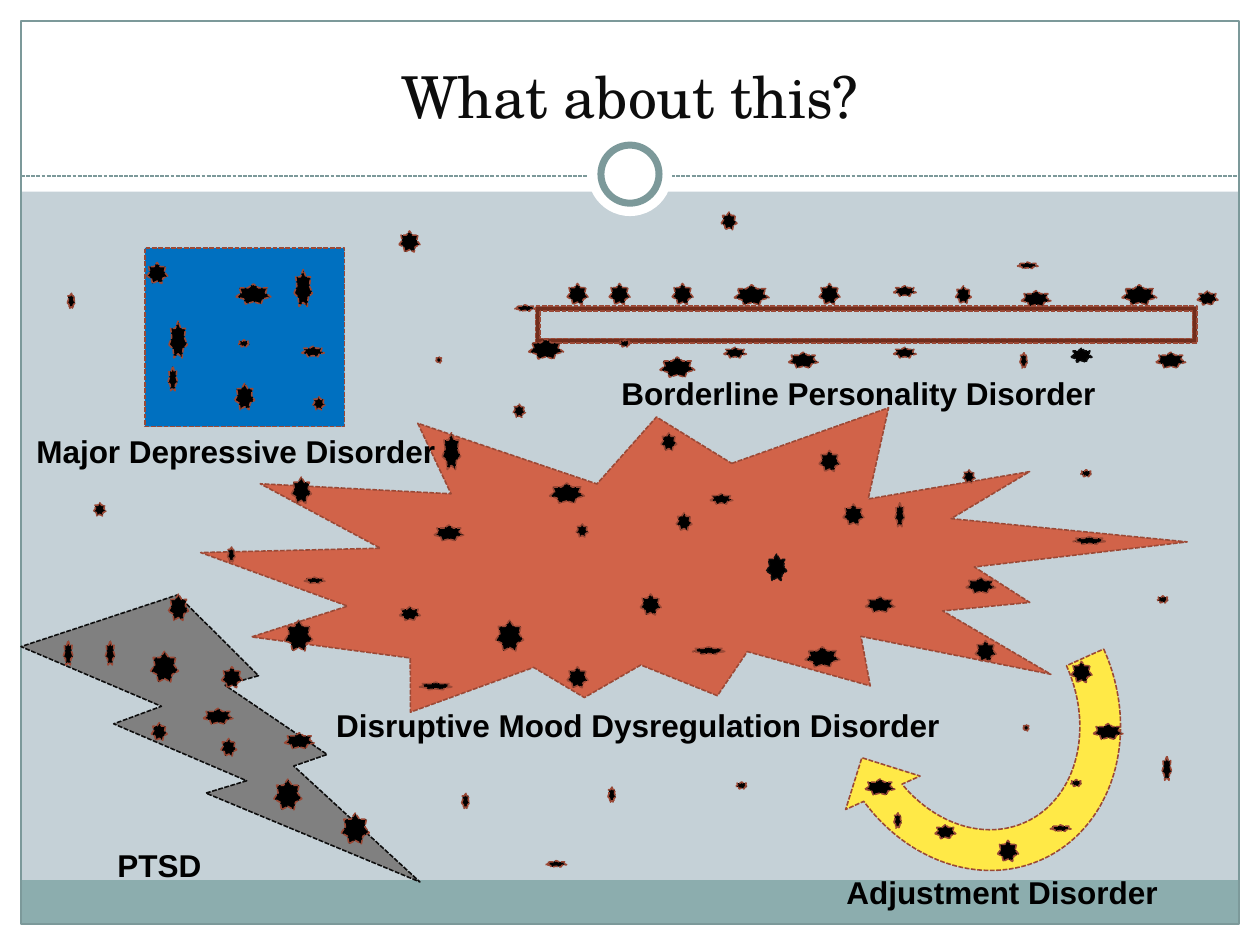
import pptx
import pptx.util
import pptx.dml.color
import pptx.enum.dml
import pptx.enum.shapes
import pptx.enum.text
import lxml.etree

Pt = pptx.util.Pt
RGB = pptx.dml.color.RGBColor
MSO = pptx.enum.shapes.MSO_SHAPE
DASH = pptx.enum.dml.MSO_LINE.SQUARE_DOT
WHITE = RGB(0xFF, 0xFF, 0xFF)
BLACK = RGB(0x00, 0x00, 0x00)
INK = RGB(0x0D, 0x0D, 0x0D)
PALE = RGB(0xC5, 0xD1, 0xD7)
TEAL = RGB(0x8C, 0xAD, 0xAE)
SLATE = RGB(0x7C, 0x99, 0x9A)
RUST = RGB(0x9B, 0x49, 0x36)
ORANGE = RGB(0xD1, 0x63, 0x49)
GRAY = RGB(0x80, 0x80, 0x80)
BLUE = RGB(0x00, 0x70, 0xC0)
BROWN = RGB(0x71, 0x2D, 0x1C)
YELLOW = RGB(0xFF, 0xE9, 0x47)

W, H = 720, 540
MARGIN = 12
HEADER = 109.5
RULE_Y = 100.6


def add_shape(kind, box, fill=None, line=None, width=0.9, dash=None, rotation=0):
    sp = s.shapes.add_shape(kind, *map(Pt, box))
    sp.shadow.inherit = False
    sp.rotation = rotation
    for fmt, color in ((sp.fill, fill), (sp.line.fill, line)):
        if color is None:
            fmt.background()
        else:
            fmt.solid()
            fmt.fore_color.rgb = color
    if line is not None:
        sp.line.width = Pt(width)
        sp.line.dash_style = dash


def set_text(tf, text, color, frame_format, font_format):
    for name, value in frame_format.items():
        setattr(tf, name, value)
    r = tf.paragraphs[0].add_run()
    r.text = text
    for name, value in font_format.items():
        setattr(r.font, name, value)
    r.font.color.rgb = color


prs = pptx.Presentation()
prs.slide_width, prs.slide_height = Pt(W), Pt(H)
s = prs.slides.add_slide(prs.slide_layouts[5])
s.background.fill.solid()
s.background.fill.fore_color.rgb = PALE

for box, color in (
    ((0, H - MARGIN, W, MARGIN), WHITE),
    ((0, 0, W, HEADER), WHITE),
    ((0, 0, MARGIN, H), WHITE),
    ((W - MARGIN, 0, MARGIN, H), WHITE),
    ((MARGIN, 503, W - 2 * MARGIN, 24.5), TEAL),
):
    add_shape(MSO.RECTANGLE, box, color)
add_shape(MSO.RECTANGLE, (MARGIN, MARGIN, W - 2 * MARGIN, H - 2 * MARGIN), None, SLATE, 0.75)

cx = s.shapes.add_connector(pptx.enum.shapes.MSO_CONNECTOR.STRAIGHT,
                            Pt(MARGIN), Pt(RULE_Y), Pt(W - MARGIN), Pt(RULE_Y))
cx.line.color.rgb = SLATE
cx.line.width = Pt(0.75)
cx.line.dash_style = DASH
lxml.etree.SubElement(cx.element.spPr, pptx.oxml.ns.qn("a:effectLst"))

for size, line in ((48, None), (33.2, SLATE)):
    add_shape(MSO.OVAL, ((W - size) / 2, 99.5 - size / 2, size, size), WHITE, line, 4)

title = s.shapes.title
title.left, title.top, title.width, title.height = Pt(24), Pt(18), Pt(672), Pt(60)
s.shapes.element.append(title.element)
set_text(title.text_frame, "What about this?", INK,
         {"vertical_anchor": pptx.enum.text.MSO_ANCHOR.BOTTOM, "word_wrap": True},
         {"name": "TeX Gyre Schola", "size": Pt(33)})
title.text_frame.paragraphs[0].alignment = pptx.enum.text.PP_ALIGN.CENTER

shapes = {
    "burst": (MSO.EXPLOSION2, (115.2, 223.2, 560.9, 198), ORANGE, RUST, 5.2),
    "bolt": (MSO.LIGHTNING_BOLT, (12, 340, 228, 164), GRAY, INK, 0),
    "square": (MSO.RECTANGLE, (82.8, 141.6, 114, 102.2), BLUE, RUST, 0),
    "bar": (MSO.FRAME, (306, 175, 378, 21), BROWN, RUST, 0),
    "arrow": (MSO.CIRCULAR_ARROW, (463, 297.4, 186.5, 213.8), YELLOW, RUST, 155.8),
}
origins = {"slide": (0, 0)}
for name, (kind, box, fill, line, rotation) in shapes.items():
    add_shape(kind, box, fill, line, dash=DASH, rotation=rotation)
    origins[name] = box[:2]

star_sizes = {
    "speck": (3.6, 3.6), "chip": (6.5, 4), "dot": (7, 7.5), "bead": (9, 10),
    "pebble": (12, 8), "round": (12, 12), "egg": (11.5, 15), "large": (16, 17.5),
    "seed": (4.5, 9), "sliver": (5.5, 14), "tall": (10.5, 21),
    "dash": (12, 3.6), "flake": (13, 6), "flat": (19, 4.3),
    "leaf": (17, 9), "wide": (20, 11.5),
}

# Each row: star size, height of the centres, then their x positions, from the owner's corner.
star_rows = {
    ("square", RUST): (
        ("round", 14.4, 7), ("tall", 23, 90.5), ("wide", 26.4, 62),
        ("tall", 52.4, 19), ("chip", 54.6, 56.6), ("flake", 59.3, 96),
        ("sliver", 74.7, 16), ("egg", 85, 57), ("dot", 88.8, 99.4)),
    ("bar", RUST): (
        ("flake", -8.7, 211), ("round", -7, 24, 48, 84, 168), ("bead", -6.6, 244.5),
        ("wide", -6.5, 123.5, 345), ("pebble", -4.7, 384), ("leaf", -4.4, 286),
        ("dash", 1, -6), ("chip", 21.2, 51), ("wide", 24.4, 6),
        ("flake", 26.5, 114, 211), ("leaf", 30.8, 153, 363), ("seed", 30.8, 279),
        ("wide", 34.8, 81)),
    ("bar", INK): (("pebble", 28, 312),),
    ("bolt", RUST): (
        ("egg", 7, 90), ("sliver", 33, 27, 51), ("large", 41, 82),
        ("round", 47, 120.5), ("leaf", 69.3, 112.6), ("bead", 78, 79),
        ("leaf", 83.3, 159), ("bead", 87, 118.7), ("large", 114, 152.5),
        ("large", 133.4, 191)),
    ("arrow", RUST): (
        ("round", 86.6, 155), ("leaf", 120.6, 170.2), ("chip", 150, 152),
        ("leaf", 152.3, 39.8), ("seed", 171.3, 50), ("dash", 175.8, 143),
        ("pebble", 177.9, 77.2), ("round", 188.8, 113)),
    ("burst", RUST): (
        ("bead", 29.2, 267), ("tall", 34.6, 142.8), ("round", 40.2, 358.8),
        ("dot", 49, 438.5), ("egg", 56.9, 57), ("wide", 58.6, 208.7),
        ("flake", 61.9, 297), ("round", 70.8, 372.5), ("sliver", 70.8, 399),
        ("bead", 74.9, 275.7), ("dot", 79.9, 217.5), ("leaf", 81.3, 141.3),
        ("flat", 85.7, 507.3), ("seed", 93.6, 17), ("dash", 108.4, 64.5),
        ("leaf", 111.3, 445.2), ("round", 122.2, 256.6), ("leaf", 122.2, 387.7),
        ("pebble", 127.4, 119), ("large", 140, 55.5, 176), ("flat", 148.6, 289.8),
        ("round", 148.8, 448), ("wide", 152.2, 354.7), ("round", 163.8, 214.8),
        ("flat", 168.8, 133.8)),
    ("burst", INK): (("egg", 101, 328.6),),
    ("slide", RUST): (
        ("bead", 126.2, 416.6), ("round", 138, 234), ("dash", 151.6, 587.2),
        ("seed", 171.8, 40.7), ("speck", 205.6, 250.8), ("dot", 234.7, 296.7),
        ("chip", 270.4, 620.7), ("dot", 291, 57), ("chip", 342.5, 664.5),
        ("speck", 415.8, 586.4), ("sliver", 438.9, 666.8), ("chip", 448.8, 423.8),
        ("seed", 454, 349.6), ("seed", 457.6, 266), ("dash", 493.6, 317.8)),
}
for (owner, line), rows in star_rows.items():
    left, top = origins[owner]
    for size, y, *xs in rows:
        w, h = star_sizes[size]
        for x in xs:
            box = (left + x - w / 2, top + y - h / 2, w, h)
            add_shape(MSO.STAR_7_POINT, box, BLACK, line, dash=DASH)

for text, left, top, width in (
    ("PTSD", 60, 480, 83.5),
    ("Major Depressive Disorder", 13.7, 243.4, 306),
    ("Borderline Personality Disorder", 348, 210.2, 303),
    ("Adjustment Disorder", 476.6, 495.4, 201.6),
    ("Disruptive Mood Dysregulation Disorder", 185, 399.6, 378),
):
    tb = s.shapes.add_textbox(Pt(left), Pt(top), Pt(width), Pt(29))
    set_text(tb.text_frame, text, BLACK,
             {"word_wrap": True, "auto_size": pptx.enum.text.MSO_AUTO_SIZE.SHAPE_TO_FIT_TEXT},
             {"name": "Arial", "size": Pt(18), "bold": True})

prs.save("out.pptx")
